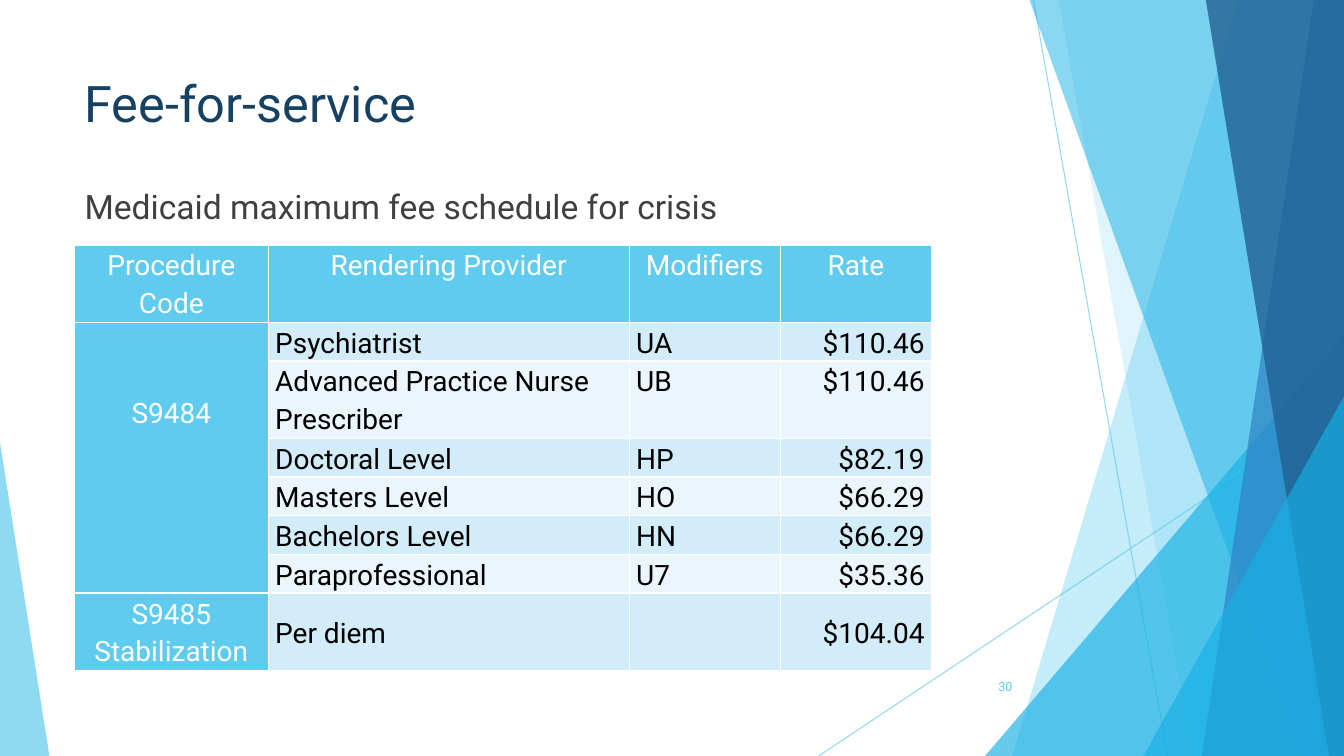
from lxml.etree import SubElement
from pptx import Presentation
from pptx.dml.color import RGBColor
from pptx.enum.shapes import MSO_CONNECTOR as Connector, MSO_SHAPE as Preset
from pptx.enum.text import MSO_ANCHOR as Anchor, PP_ALIGN as Align
from pptx.oxml.ns import qn
from pptx.util import Pt

PX = 9144
WIDTH, HEIGHT = 1333, 750
COLORS = {
    "sky": "5FCBEF", "cyan": "17B0E4", "blue": "2E83C3", "deep": "226292",
    "title": "174162", "body": "404040", "black": "000000", "white": "FFFFFF",
    "band": "D2ECF9", "pale": "EAF6FC",
}


def apply(target, formats):
    for name, value in formats.items():
        setattr(target, name, value)


class SlideBuilder:
    font = "Roboto"
    cell_format = {"margin_left": 7 * PX, "margin_right": 7 * PX, "margin_top": 0, "margin_bottom": 0}

    def __init__(self, slide):
        self.slide = slide
        self.shapes = slide.shapes

    def color(self, fill, name, opacity=100):
        fill.solid()
        fill.fore_color.rgb = RGBColor.from_string(COLORS[name])
        if opacity < 100:
            color = fill._xPr.find(qn("a:solidFill"))[0]
            SubElement(color, qn("a:alpha"), val=str(opacity * 1000))

    def paint(self, facet, name, opacity):
        facet.shadow.inherit = False
        facet.line.fill.background()
        self.color(facet.fill, name, opacity)

    def ray(self, start, end):
        ray = self.shapes.add_connector(Connector.STRAIGHT, *(v * PX for v in start + end))
        ray.line.width = Pt(0.75)
        self.color(ray.line.fill, "sky", 70)
        SubElement(ray._element.spPr, qn("a:effectLst"))

    def panel(self, top_left, bottom_left, name, opacity):
        outline = self.shapes.build_freeform(top_left, 0, scale=PX)
        outline.add_line_segments([(WIDTH, 0), (WIDTH, HEIGHT), (bottom_left, HEIGHT)])
        self.paint(outline.convert_to_shape(), name, opacity)

    def corner(self, left, top, width, apex, name, opacity):
        corner = self.shapes.add_shape(
            Preset.ISOSCELES_TRIANGLE, left * PX, top * PX, width * PX, (HEIGHT - top) * PX)
        corner.adjustments[0] = apex
        self.paint(corner, name, opacity)

    def fill_text(self, frame, text, size, color, **paragraph_format):
        paragraph = frame.paragraphs[0]
        apply(paragraph, paragraph_format)
        run = paragraph.add_run()
        run.text = text
        apply(run.font, {"name": self.font, "size": Pt(size), "bold": False})
        self.color(run.font.fill, color)

    def text(self, box, text, size, color, anchor=Anchor.TOP, align=Align.LEFT):
        frame = self.shapes.add_textbox(*(v * PX for v in box)).text_frame
        apply(frame, {"word_wrap": True, "vertical_anchor": anchor})
        self.fill_text(frame, text, size, color, alignment=align)

    def borders(self, cell):
        properties = cell._tc.get_or_add_tcPr()
        for side in ("lnL", "lnR", "lnT", "lnB"):
            border = SubElement(properties, qn(f"a:{side}"), w=str(Pt(1)))
            fill = SubElement(border, qn("a:solidFill"))
            SubElement(fill, qn("a:srgbClr"), val=COLORS["white"])

    def cell(self, cell, text, fill, color, align, **cell_format):
        apply(cell, self.cell_format | cell_format)
        self.borders(cell)
        self.color(cell.fill, fill)
        if text:
            self.fill_text(cell.text_frame, text, 20, color, alignment=align, line_spacing=1.15)

    def table(self, left, top, widths, heights):
        table = self.shapes.add_table(
            len(heights), len(widths), left * PX, top * PX, sum(widths) * PX, sum(heights) * PX).table
        table.horz_banding = False
        for column, width in zip(table.columns, widths):
            column.width = width * PX
        for row, height in zip(table.rows, heights):
            row.height = height * PX
        return table


FEES = [
    ("Procedure Code", "Rendering Provider", "Modifiers", "Rate"),
    ("S9484", "Psychiatrist", "UA", "$110.46"),
    ("", "Advanced Practice Nurse Prescriber", "UB", "$110.46"),
    ("", "Doctoral Level", "HP", "$82.19"),
    ("", "Masters Level", "HO", "$66.29"),
    ("", "Bachelors Level", "HN", "$66.29"),
    ("", "Paraprofessional", "U7", "$35.36"),
    ("S9485 Stabilization", "Per diem", "", "$104.04"),
]


def draw_backdrop(builder):
    builder.ray((1025, 0), (1158, HEIGHT))
    builder.ray((WIDTH, 403), (812, HEIGHT))
    builder.panel(1228, 1004, "sky", 36)
    builder.panel(1050, 1183, "sky", 20)
    builder.corner(977, 333, 356, 1, "cyan", 66)
    builder.panel(1021, 1291, "cyan", 50)
    builder.panel(1303, 1192, "blue", 70)
    builder.panel(1196, 1318, "deep", 80)
    builder.corner(1134, 393, 199, 1, "cyan", 66)
    builder.corner(0, 439, 49, 0, "sky", 70)


def draw_fees(builder):
    table = builder.table(74, 243, [192, 358, 150, 150], [75, 37, 75, 37, 37, 37, 37, 75])
    last = len(FEES) - 1
    for row, fees in enumerate(FEES):
        for column, text in enumerate(fees):
            heading = row == 0 or column == 0
            fill = "sky" if heading else "band" if row % 2 else "pale"
            align = Align.CENTER if heading else Align.RIGHT if column == 3 else Align.LEFT
            anchor = Anchor.MIDDLE if row == last and not heading else Anchor.TOP
            builder.cell(table.cell(row, column), text, fill,
                         "white" if heading else "black", align, vertical_anchor=anchor)
    crisis_code = table.cell(1, 0)
    crisis_code.merge(table.cell(last - 1, 0))
    crisis_code.margin_top = 70 * PX


def main():
    deck = Presentation()
    apply(deck, {"slide_width": WIDTH * PX, "slide_height": HEIGHT * PX})
    builder = SlideBuilder(deck.slides.add_slide(deck.slide_layouts[6]))
    draw_backdrop(builder)
    builder.text((74, 67, 940, 144), "Fee-for-service", 36, "title")
    builder.text((939, 661, 75, 40), "30", 9, "sky", Anchor.MIDDLE, Align.RIGHT)
    builder.text((74, 180, 850, 63), "Medicaid maximum fee schedule for crisis", 24, "body")
    draw_fees(builder)
    deck.save("out.pptx")


if __name__ == "__main__":
    main()
